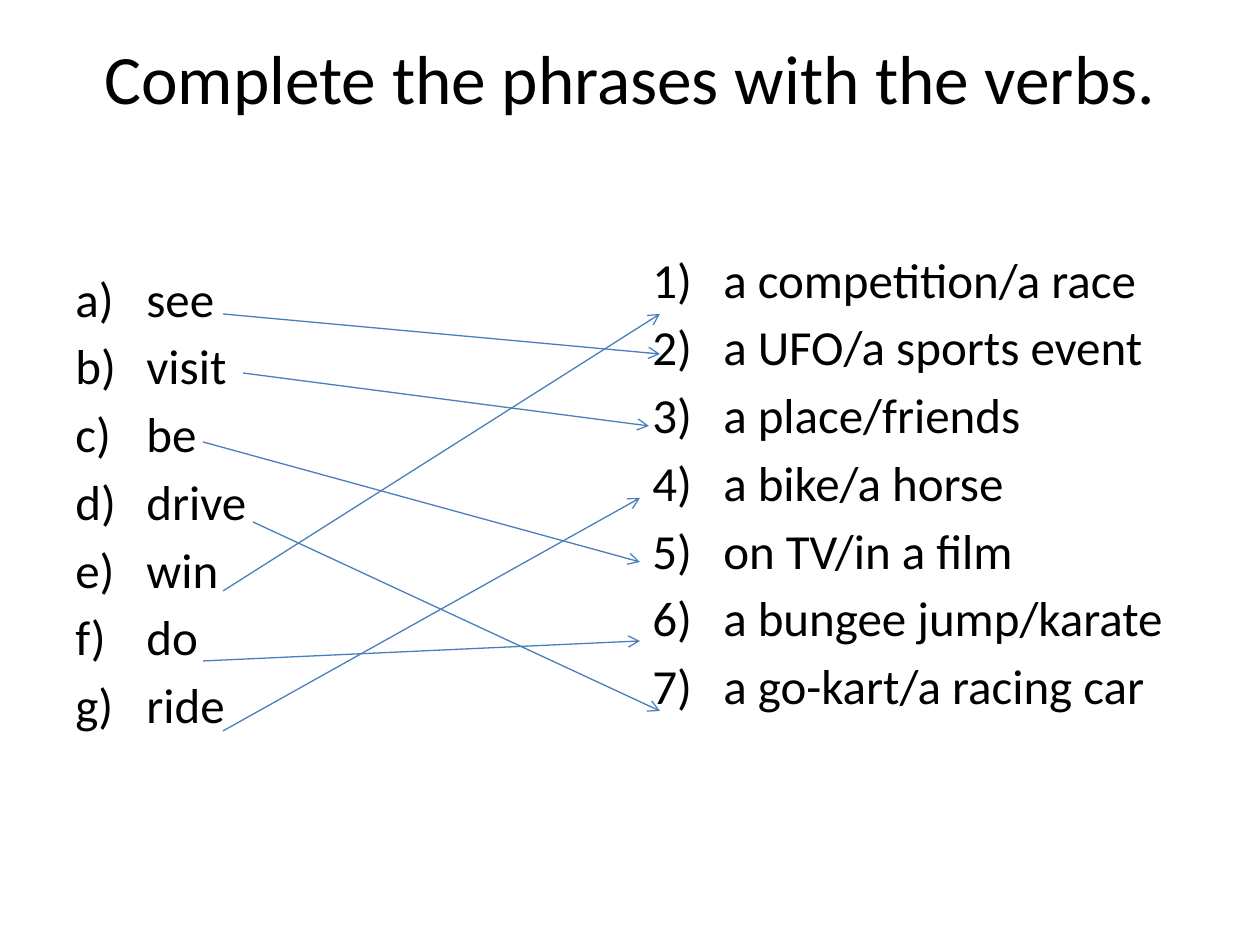
from lxml.etree import SubElement
from pptx import Presentation
from pptx.dml.color import RGBColor
from pptx.enum.shapes import MSO_CONNECTOR
from pptx.enum.text import MSO_ANCHOR, PP_ALIGN
from pptx.oxml.ns import qn
from pptx.util import Emu, Pt

PX = 914400 // 126
FONT = "Calibri"
COLORS = {"background": "FFFFFF", "text": "000000", "arrow": "4B7EBC"}
INDENT = 71

VERBS = ["see", "visit", "be", "drive", "win", "do", "ride"]
PHRASES = [
    "a competition/a race",
    "a UFO/a sports event",
    "a place/friends",
    "a bike/a horse",
    "on TV/in a film",
    "a bungee jump/karate",
    "a go-kart/a racing car",
]
# Start and end of the arrow from each verb to its phrase
MATCHES = [
    (243, 373, 649, 426),  # visit
    (203, 442, 640, 562),  # be
    (253, 522, 660, 711),  # drive
    (223, 591, 660, 314),  # win
    (203, 661, 640, 641),  # do
    (223, 731, 640, 498),  # ride
    (223, 314, 660, 354),  # see
]


def px(value):
    return Emu(value * PX)


def color(name):
    return RGBColor.from_string(COLORS[name])


def number_paragraph(paragraph, scheme):
    properties = paragraph._p.get_or_add_pPr()
    properties.set("marL", str(px(INDENT)))
    properties.set("indent", str(px(-INDENT)))
    SubElement(properties, qn("a:buFont"), typeface="+mj-lt")
    SubElement(properties, qn("a:buAutoNum"), type=scheme)


def add_text(slide, lines, left, top, width, height, size=28,
             align=PP_ALIGN.LEFT, anchor=MSO_ANCHOR.TOP, space=0, numbering=None):
    box = slide.shapes.add_textbox(px(left), px(top), px(width), px(height))
    frame = box.text_frame
    frame.word_wrap = True
    frame.vertical_anchor = anchor
    for index, line in enumerate(lines):
        paragraph = frame.add_paragraph() if index else frame.paragraphs[0]
        paragraph.alignment = align
        paragraph.space_before = Pt(space)
        if numbering:
            number_paragraph(paragraph, numbering)
        run = paragraph.add_run()
        run.text = line
        run.font.name = FONT
        run.font.size = Pt(size)
        run.font.color.rgb = color("text")


def add_arrow(slide, *ends):
    arrow = slide.shapes.add_connector(MSO_CONNECTOR.STRAIGHT, *map(px, ends))
    arrow.line.color.rgb = color("arrow")
    arrow.line.width = Pt(0.75)
    SubElement(arrow.line._get_or_add_ln(), qn("a:tailEnd"), type="arrow")
    SubElement(arrow._element.spPr, qn("a:effectLst"))


def main():
    presentation = Presentation()
    presentation.slide_width = px(1260)
    presentation.slide_height = px(945)
    slide = presentation.slides.add_slide(presentation.slide_layouts[6])
    slide.background.fill.solid()
    slide.background.fill.fore_color.rgb = color("background")

    # Title
    add_text(slide, ["Complete the phrases with the verbs."], 63, 38, 1134, 77,
             size=39.6, align=PP_ALIGN.CENTER, anchor=MSO_ANCHOR.MIDDLE)

    # Verbs and the phrases they complete
    add_text(slide, VERBS, 63, 262, 557, 657, space=5.1, numbering="alphaLcParenR")
    add_text(slide, PHRASES, 640, 243, 557, 647, space=5.1, numbering="arabicParenR")

    # Matching arrows
    for match in MATCHES:
        add_arrow(slide, *match)

    presentation.save("out.pptx")


if __name__ == "__main__":
    main()
